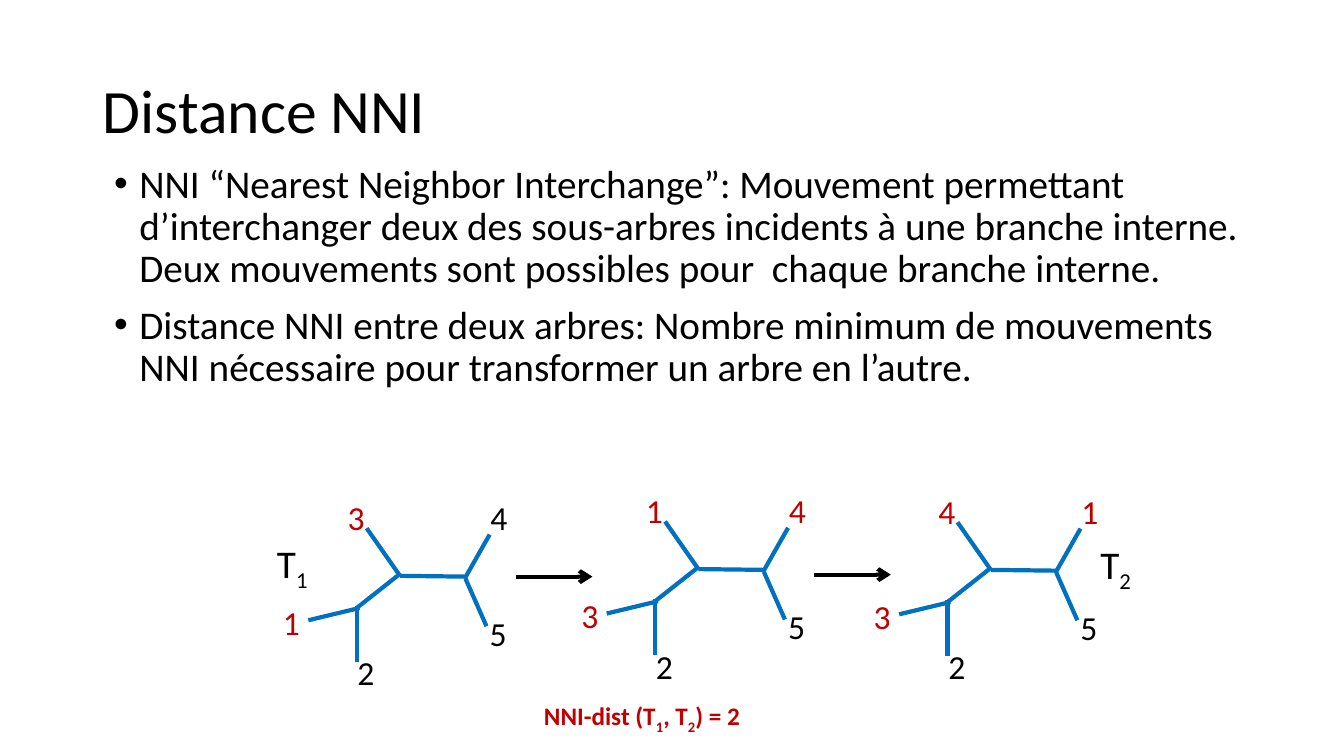
import pptx
import pptx.util
import pptx.dml.color
import pptx.enum.shapes
import pptx.enum.text
import pptx.oxml
import pptx.oxml.ns

Cm = pptx.util.Cm
Pt = pptx.util.Pt
RGB = pptx.dml.color.RGBColor
BLACK = RGB(0x00, 0x00, 0x00)
RED = RGB(0xC0, 0x00, 0x00)
BLUE = RGB(0x00, 0x70, 0xC0)
FONT = "Calibri"

# Tree branches in cm from the tree's corner: x1, y1, x2, y2
BRANCHES = [
    (2.36, 0.91, 3.20, 2.11),
    (5.46, 1.07, 4.83, 2.18),
    (2.11, 2.92, 3.20, 2.06),
    (2.11, 2.87, 2.11, 4.27),
    (4.85, 2.13, 3.20, 2.11),
    (4.85, 2.18, 5.38, 3.38),
    (0.89, 3.23, 2.18, 2.92),
]
# Leaf labels: upper left, upper right, lower right, left, bottom
LEAF_SPOTS = [(1.63, 0), (5.23, 0), (5.21, 2.92), (0, 2.64), (1.88, 3.91)]
LEAF_SIZE = (0.94, 1.27)

# Left, top, leaves in the order of the spots, leaves shown in red
TREES = [
    (6.88, 12.40, "34512", "31"),
    (14.40, 12.23, "14532", "143"),
    (21.77, 12.25, "41532", "413"),
]
ARROWS = [(13.00, 14.53), (20.52, 14.48)]
ARROW_LENGTH = 1.93

BULLETS = [
    "NNI “Nearest Neighbor Interchange”: Mouvement permettant d’interchanger "
    "deux des sous-arbres incidents à une branche interne. Deux mouvements "
    "sont possibles pour  chaque branche interne.",
    "Distance NNI entre deux arbres: Nombre minimum de mouvements NNI "
    "nécessaire pour transformer un arbre en l’autre.",
]


def write(p, text, size=24, color=BLACK, bold=False, spacing=None):
    """Fill a paragraph; the character after each underscore is a subscript."""
    p.alignment = pptx.enum.text.PP_ALIGN.LEFT
    if spacing:
        p.line_spacing = spacing
    first, *rest = text.split("_")
    pieces = [(first, False)]
    for part in rest:
        pieces += [(part[0], True), (part[1:], False)]
    for piece, subscript in pieces:
        if not piece:
            continue
        r = p.add_run()
        r.text = piece
        r.font.name = FONT
        r.font.size = Pt(size)
        r.font.bold = bold
        r.font.color.rgb = color
        if subscript:
            r._r.get_or_add_rPr().set("baseline", "-25000")


def place(sp, box):
    sp.left, sp.top, sp.width, sp.height = (Cm(v) for v in box)


def add_label(s, box, text, **fmt):
    sp = s.shapes.add_textbox(*(Cm(v) for v in box))
    tf = sp.text_frame
    tf.word_wrap = False
    tf.auto_size = pptx.enum.text.MSO_AUTO_SIZE.SHAPE_TO_FIT_TEXT
    write(tf.paragraphs[0], text, **fmt)


def add_line(s, ends, color, arrow=False):
    sp = s.shapes.add_connector(
        pptx.enum.shapes.MSO_CONNECTOR.STRAIGHT, *(Cm(v) for v in ends))
    sp.line.color.rgb = color
    sp.line.width = Pt(3)
    qn = pptx.oxml.ns.qn
    if arrow:
        ln = sp.line._get_or_add_ln()
        ln.append(ln.makeelement(qn("a:tailEnd"), {"type": "arrow"}))
    sp_pr = sp._element.spPr
    sp_pr.append(sp_pr.makeelement(qn("a:effectLst"), {}))


def add_title(s, box):
    sp = s.shapes.title
    place(sp, box)
    tf = sp.text_frame
    tf.vertical_anchor = pptx.enum.text.MSO_ANCHOR.MIDDLE
    tf.auto_size = pptx.enum.text.MSO_AUTO_SIZE.NONE
    write(tf.paragraphs[0], "Distance NNI", size=44, spacing=0.9)


def add_body(s, box):
    sp = s.placeholders[1]
    place(sp, box)
    tf = sp.text_frame
    tf.auto_size = pptx.enum.text.MSO_AUTO_SIZE.NONE
    for i, text in enumerate(BULLETS):
        p = tf.add_paragraph() if i else tf.paragraphs[0]
        p.space_before = Pt(10)
        write(p, text, size=28, spacing=0.9)
        indent = Cm(0.64)
        p_pr = p._p.get_or_add_pPr()
        p_pr.set("marL", str(indent))
        p_pr.set("indent", str(-indent))


def add_tree(s, left, top, leaves, red_leaves):
    for x1, y1, x2, y2 in BRANCHES:
        add_line(s, (left + x1, top + y1, left + x2, top + y2), BLUE)
    for leaf, (x, y) in zip(leaves, LEAF_SPOTS):
        add_label(s, (left + x, top + y, *LEAF_SIZE), leaf,
                  color=RED if leaf in red_leaves else BLACK)


def main():
    prs = pptx.Presentation()
    prs.slide_width, prs.slide_height = Cm(33.87), Cm(19.05)
    s = prs.slides.add_slide(prs.slide_layouts[1])

    # Title and definitions
    add_title(s, (2.34, 1.02, 29.21, 3.68))
    add_body(s, (2.62, 4.01, 28.93, 8.31))

    # Three trees joined by two moves
    for tree in TREES:
        add_tree(s, *tree)
    for x, y in ARROWS:
        add_line(s, (x, y, x + ARROW_LENGTH, y), BLACK, arrow=True)

    # Tree names and resulting distance
    add_label(s, (6.73, 13.46, 1.37, 1.45), "T_1", size=28)
    add_label(s, (27.48, 13.49, 1.37, 1.45), "T_2", size=28)
    add_label(s, (13.46, 17.53, 5.56, 1.02), "NNI-dist (T_1, T_2) = 2",
              size=18, color=RED, bold=True)

    prs.save("out.pptx")


if __name__ == "__main__":
    main()
